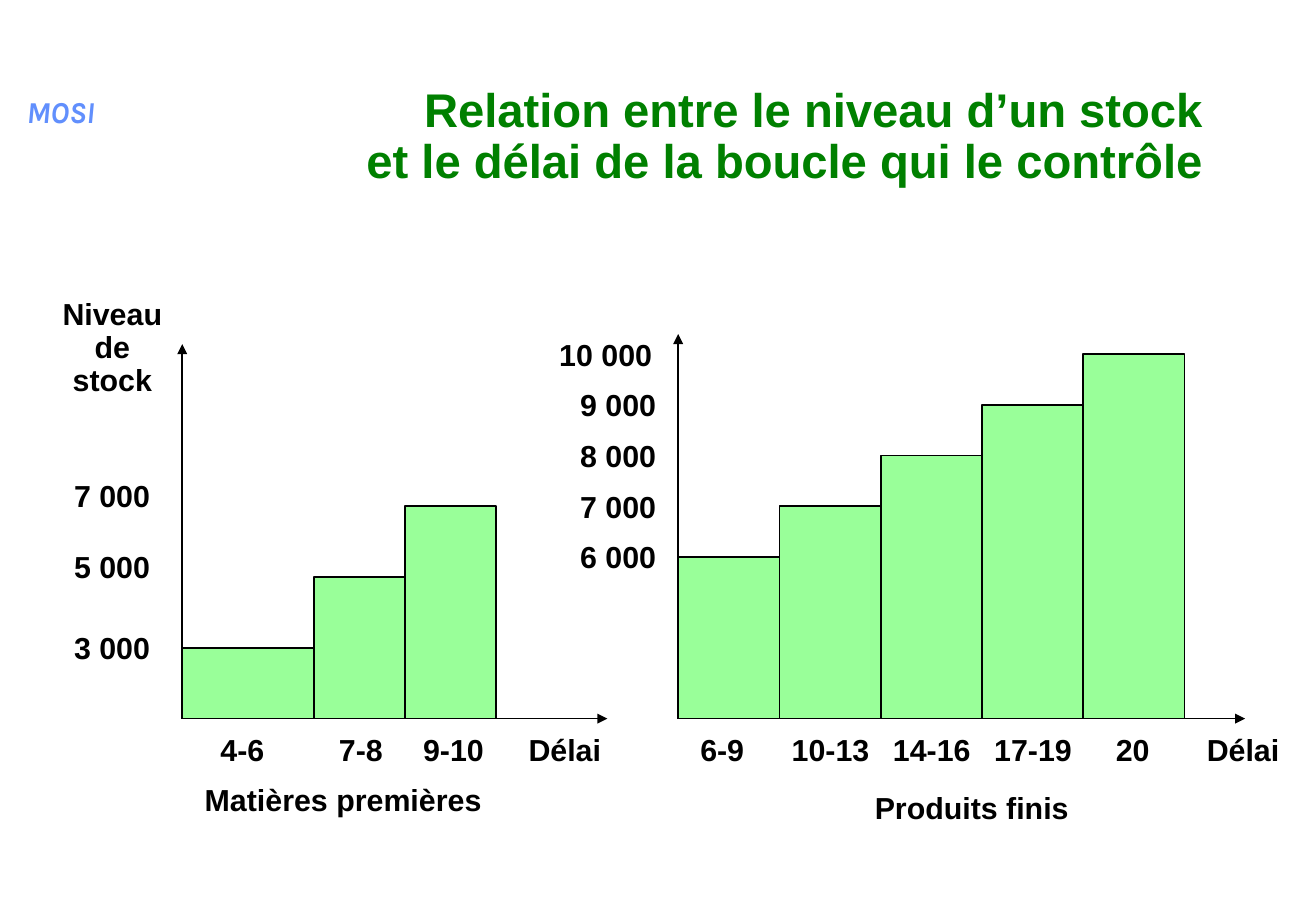
"""Build a slide of two stock level charts set against loop delay."""
import pptx
import pptx.dml.color
import pptx.enum.shapes
import pptx.enum.text
import pptx.oxml.ns
import pptx.util
from lxml import etree

PX = 914400 // 120
BASE = 710
LEFT = {
    "axis": (180, 340, 600),
    "bars": [(180, 130, 70), (310, 90, 140), (400, 90, 210)],
    "delays": [(206, 67, "4-6"), (323, 67, "7-8"), (406, 84, "9-10"), (510, 96, "Délai")],
    "levels": [(60, 620, 100, "3 000"), (60, 540, 100, "5 000"), (60, 470, 100, "7 000")],
    "name": (190, 770, 298, "Matières premières"),
}
RIGHT = {
    "axis": (670, 330, 1230),
    "bars": [(670 + 100 * i, 100, 160 + 50 * i) for i in range(5)],
    "delays": [(680, 67, "6-9"), (770, 101, "10-13"), (870, 101, "14-16"),
               (970, 101, "17-19"), (1090, 58, "20"), (1180, 96, "Délai")],
    "levels": [(560, 530 - 50 * i, 100, f"{6 + i} 000") for i in range(4)]
    + [(540, 330, 116, "10 000")],
    "name": (852, 778, 216, "Produits finis"),
}


def px(*sizes):
    return [pptx.util.Emu(size * PX) for size in sizes]


def color(code):
    return pptx.dml.color.RGBColor.from_string(code)


def write(frame, text, size=18, font="Arial", ink="000000", italic=False, align="CENTER"):
    frame.text = text
    for para in frame.paragraphs:
        para.alignment = getattr(pptx.enum.text.PP_ALIGN, align)
        para.line_spacing = 0.9
        for run in para.runs:
            run.font.size = pptx.util.Pt(size)
            run.font.name = font
            run.font.bold = True
            run.font.italic = italic
            run.font.color.rgb = color(ink)


def label(slide, x, y, wide, text, high=44, wrap=False, **form):
    frame = slide.shapes.add_textbox(*px(x, y, wide, high)).text_frame
    frame.word_wrap = wrap
    frame.auto_size = pptx.enum.text.MSO_AUTO_SIZE.SHAPE_TO_FIT_TEXT
    write(frame, text, **form)


def title(slide, text):
    shape = slide.shapes.title
    shape.left, shape.top, shape.width, shape.height = px(100, 80, 1100, 150)
    frame = shape.text_frame
    frame.auto_size = pptx.enum.text.MSO_AUTO_SIZE.NONE
    frame.vertical_anchor = pptx.enum.text.MSO_ANCHOR.TOP
    write(frame, text, size=28, ink="008000", align="RIGHT")


def arrow(slide, *ends):
    kind = pptx.enum.shapes.MSO_CONNECTOR.STRAIGHT
    line = slide.shapes.add_connector(kind, *px(*ends))
    line.line.color.rgb = color("000000")
    line.line.width = pptx.util.Pt(1)
    qn = pptx.oxml.ns.qn
    props = line.element.spPr
    etree.SubElement(props.find(qn("a:ln")), qn("a:tailEnd"), type="triangle")
    etree.SubElement(props, qn("a:effectLst"))


def bar(slide, x, wide, high):
    kind = pptx.enum.shapes.MSO_SHAPE.RECTANGLE
    shape = slide.shapes.add_shape(kind, *px(x, BASE - high, wide, high))
    shape.shadow.inherit = False
    shape.fill.solid()
    shape.fill.fore_color.rgb = color("99FF99")
    shape.line.color.rgb = color("000000")
    shape.line.width = pptx.util.Pt(1)


def graph(slide, data):
    x, top, end = data["axis"]
    arrow(slide, x, BASE, x, top)
    arrow(slide, x, BASE, end, BASE)
    for item in data["bars"]:
        bar(slide, *item)
    for left, wide, text in data["delays"]:
        label(slide, left, 720, wide, text)
    for item in data["levels"]:
        label(slide, *item, align="RIGHT")
    label(slide, *data["name"])


def main():
    deck = pptx.Presentation()
    deck.slide_width, deck.slide_height = px(1300, 900)
    slide = deck.slides.add_slide(deck.slide_layouts[5])
    label(slide, 0, 90, 120, "MOSI", wrap=True, font="Karla", ink="618FFD", italic=True)
    title(slide, "Relation entre le niveau d’un stock\vet le délai de la boucle qui le contrôle")
    graph(slide, LEFT)
    graph(slide, RIGHT)
    label(slide, 50, 290, 122, "Niveau\nde\nstock", high=109)
    deck.save("out.pptx")


if __name__ == "__main__":
    main()
